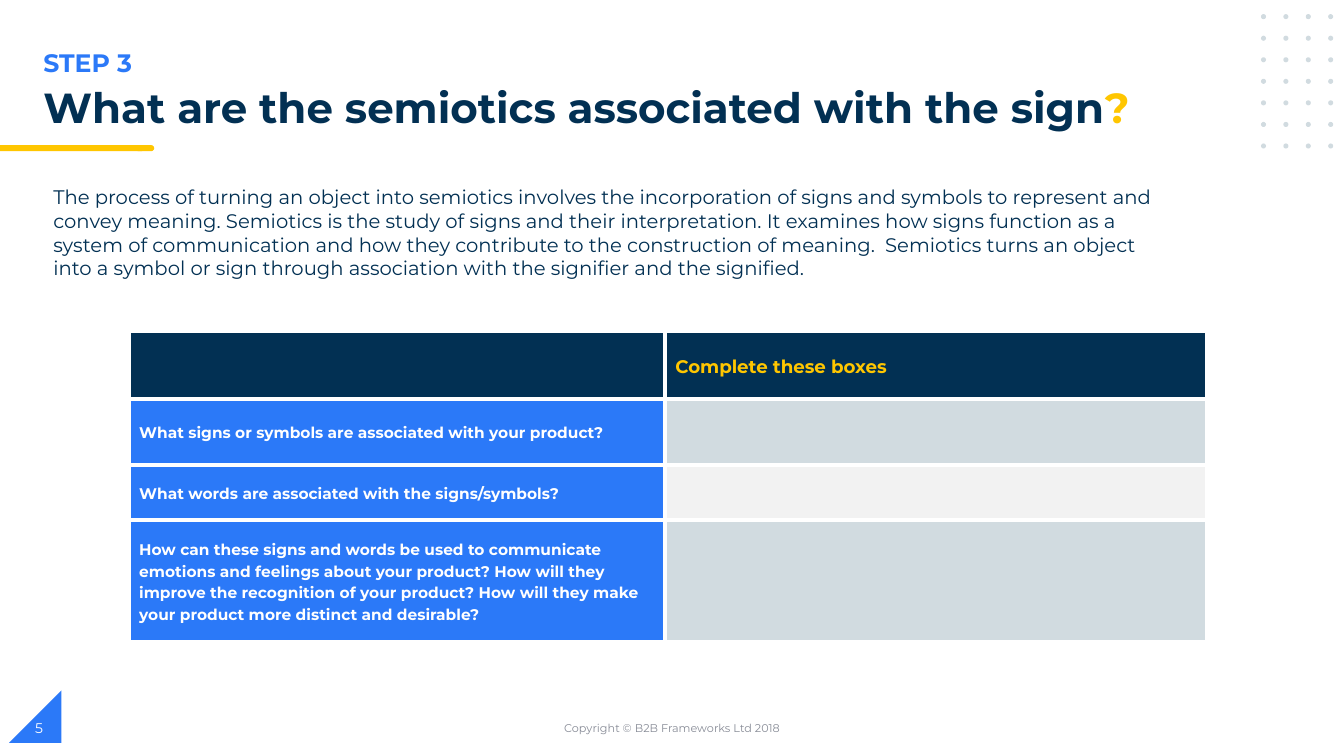
from lxml import etree
from pptx import Presentation
from pptx import util as u
from pptx.dml.color import RGBColor
from pptx.enum import shapes, text
from pptx.oxml.ns import qn

COLORS = {
    "navy": "023053",
    "blue": "2B79F8",
    "yellow": "FFC600",
    "mist": "D1DBE0",
    "pale": "F2F2F2",
    "grey": "888C97",
    "white": "FFFFFF",
}

QUESTIONS = [
    ("What signs or symbols are associated with your product?", "mist"),
    ("What words are associated with the signs/symbols?", "pale"),
    ("How can these signs and words be used to communicate emotions and feelings "
     "about your product? How will they improve the recognition of your product? "
     "How will they make your product more distinct and desirable?", "mist"),
]

INTRO = (
    "The process of turning an object into semiotics involves the incorporation of "
    "signs and symbols to represent and convey meaning. Semiotics is the study of "
    "signs and their interpretation. It examines how signs function as a system of "
    "communication and how they contribute to the construction of meaning.  Semiotics "
    "turns an object into a symbol or sign through association with the signifier and "
    "the signified."
)


def rgb(name):
    return RGBColor.from_string(COLORS[name])


def write(paragraph, content, size=14, color="navy", bold=False, align="LEFT", spacing=1.0):
    paragraph.alignment = getattr(text.PP_ALIGN, align)
    paragraph.line_spacing = spacing
    run = paragraph.add_run()
    run.text = content
    run.font.name = "Montserrat"
    run.font.size = u.Pt(size)
    run.font.bold = bold
    run.font.color.rgb = rgb(color)


class SlideBuilder:
    def __init__(self, slide):
        self.slide = slide

    def title(self, box, parts, **style):
        heading = self.slide.shapes.title
        heading.left, heading.top, heading.width, heading.height = map(u.Pt, box)
        frame = heading.text_frame
        frame.auto_size = text.MSO_AUTO_SIZE.NONE
        frame.vertical_anchor = text.MSO_ANCHOR.TOP
        for content, color in parts:
            write(frame.paragraphs[0], content, color=color, **style)

    def label(self, box, content, anchor="TOP", **style):
        frame = self.slide.shapes.add_textbox(*map(u.Pt, box)).text_frame
        frame.word_wrap = True
        frame.vertical_anchor = getattr(text.MSO_ANCHOR, anchor)
        write(frame.paragraphs[0], content, **style)

    def shape(self, kind, box, color, flip=False):
        figure = self.slide.shapes.add_shape(
            getattr(shapes.MSO_SHAPE, kind), *map(u.Pt, box))
        figure.shadow.inherit = False
        figure.fill.solid()
        figure.fill.fore_color.rgb = rgb(color)
        figure.line.fill.background()
        if flip:
            figure._element.spPr.get_or_add_xfrm().set("flipH", "1")

    def table(self, left, top, widths, heights):
        grid = self.slide.shapes.add_table(
            len(heights), len(widths), u.Pt(left), u.Pt(top),
            u.Pt(sum(widths)), u.Pt(sum(heights))).table
        grid.first_row = grid.horz_banding = False
        for column, width in zip(grid.columns, widths):
            column.width = u.Pt(width)
        for row, height in zip(grid.rows, heights):
            row.height = u.Pt(height)
        return grid

    def cell(self, cell, fill, content="", **style):
        properties = cell._tc.get_or_add_tcPr()
        for side in ("a:lnL", "a:lnR", "a:lnT", "a:lnB"):
            border = etree.SubElement(properties, qn(side), w=str(u.Pt(3)))
            solid = etree.SubElement(border, qn("a:solidFill"))
            etree.SubElement(solid, qn("a:srgbClr"), val=COLORS["white"])
        cell.fill.solid()
        cell.fill.fore_color.rgb = rgb(fill)
        cell.margin_top = cell.margin_bottom = 0
        cell.vertical_anchor = text.MSO_ANCHOR.MIDDLE
        if content:
            write(cell.text_frame.paragraphs[0], content, bold=True, spacing=1.15, **style)


def main():
    deck = Presentation()
    deck.slide_width, deck.slide_height = u.Pt(960), u.Pt(540)
    page = SlideBuilder(deck.slides.add_slide(deck.slide_layouts[5]))

    page.shape("RIGHT_TRIANGLE", (6.5, 493.2, 37.4, 37.4), "blue", flip=True)
    page.shape("FLOWCHART_TERMINATOR", (96.5, 103.7, 13.7, 4.3), "yellow")
    page.shape("RECTANGLE", (0, 103.7, 101.5, 4.3), "yellow")
    for row in range(7):
        for column in range(4):
            page.shape("OVAL", (900.7 + 16 * column, 10.1 + 15.4 * row, 3.6, 3.6), "mist")

    page.label((23.8, 30.2, 481.7, 28.8), "STEP 3", size=18, color="blue", bold=True)
    page.title((23.8, 59, 856, 40.3),
               [("What are the semiotics associated with the sign", "navy"), ("?", "yellow")],
               size=30, bold=True, spacing=0.9)
    page.label((31, 128.9, 809.3, 74.9), INTRO)

    answers = page.table(92.2, 236.2, (383, 386.6), (49, 46.8, 39.6, 87.1))
    page.cell(answers.cell(0, 0), "navy")
    page.cell(answers.cell(0, 1), "navy", "Complete these boxes", size=13, color="yellow")
    for row, (question, answer_fill) in enumerate(QUESTIONS, start=1):
        page.cell(answers.cell(row, 0), "blue", question, size=11, color="white")
        page.cell(answers.cell(row, 1), answer_fill)

    page.label((318.2, 505.4, 324, 28.8), "Copyright © B2B Frameworks Ltd 2018",
               anchor="MIDDLE", size=8, color="grey", align="CENTER")
    page.label((18, 505.4, 216, 28.8), "5", anchor="MIDDLE", size=10, color="white")

    deck.save("out.pptx")


if __name__ == "__main__":
    main()
